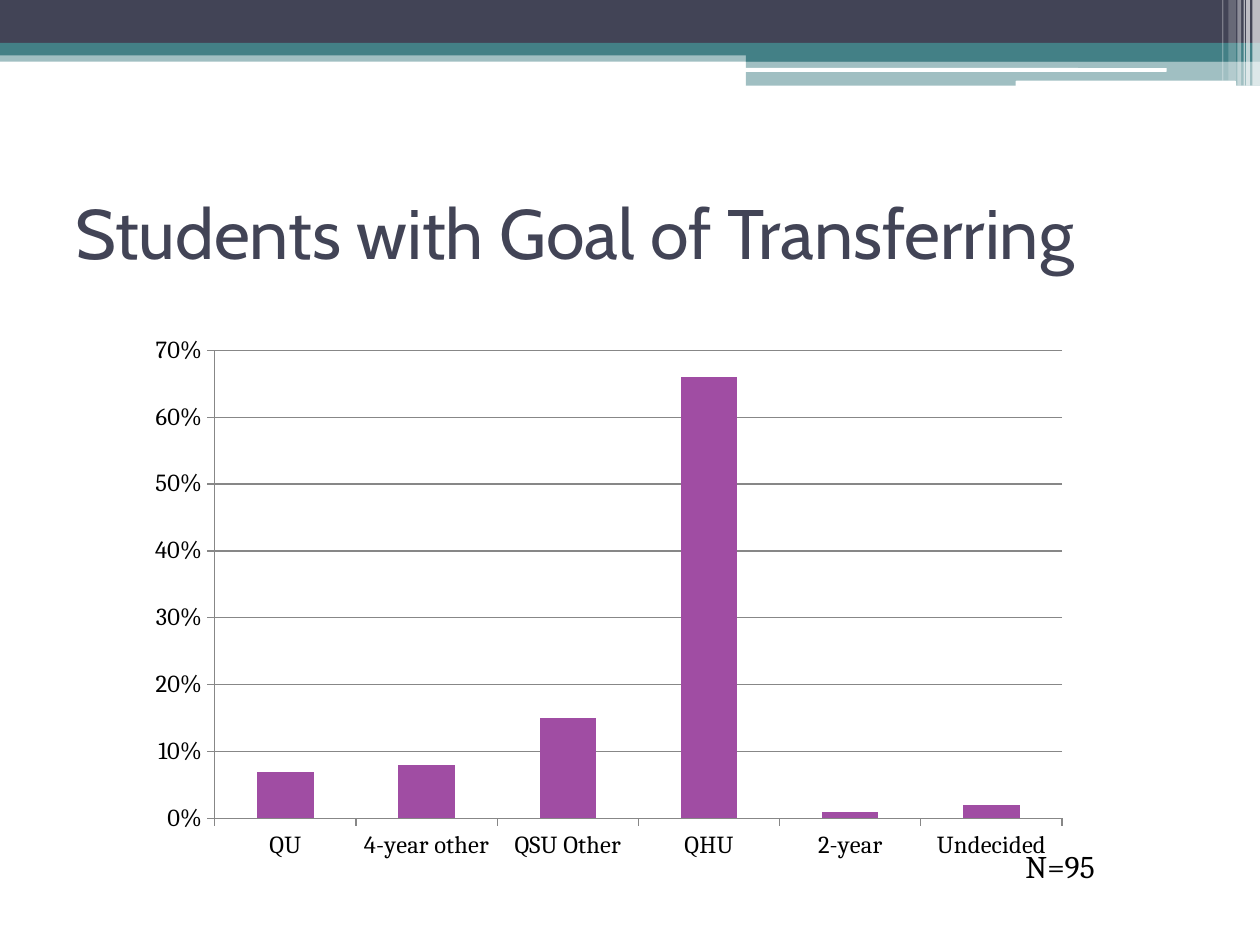
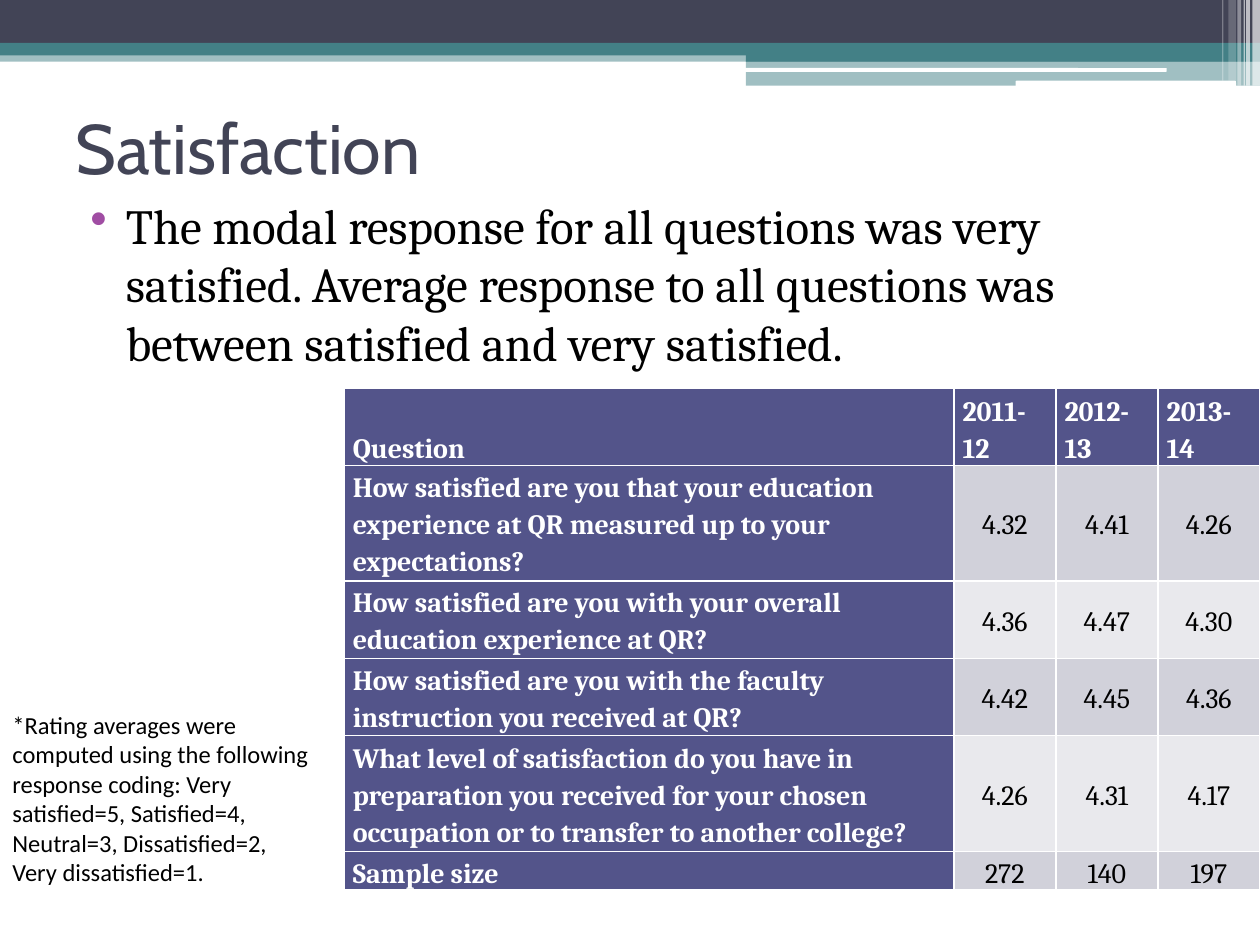
from lxml.etree import SubElement
from pptx import Presentation
from pptx.chart.data import CategoryChartData
from pptx.dml.color import RGBColor
from pptx.enum.chart import XL_CHART_TYPE, XL_TICK_MARK
from pptx.enum.shapes import MSO_SHAPE
from pptx.enum.text import MSO_ANCHOR, PP_ALIGN
from pptx.oxml.ns import qn
from pptx.util import Inches, Pt

WHITE = RGBColor(0xFF, 0xFF, 0xFF)
BLACK = RGBColor(0, 0, 0)
SLATE = RGBColor(0x42, 0x44, 0x56)
TEAL = RGBColor(0x43, 0x80, 0x86)
PURPLE = RGBColor(0xA0, 0x4D, 0xA3)
INDIGO = RGBColor(0x53, 0x54, 0x8A)
GREY = RGBColor(0x87, 0x87, 0x87)
ROW_FILLS = (RGBColor(0xD1, 0xD1, 0xDA), RGBColor(0xE9, 0xE9, 0xED))

TITLE_FONT = {"name": "Cabin", "size": Pt(40), "color": SLATE}
BODY_FONT = {"name": "Cambria", "size": Pt(28), "color": BLACK}
SAMPLE_FONT = BODY_FONT | {"size": Pt(18)}
NOTE_FONT = {"name": "Calibri", "size": Pt(14), "color": BLACK}
AXIS_FONT = {"name": "Cambria", "size": Pt(14), "color": BLACK}
VALUE_FONT = {"name": "Cambria", "size": Pt(16), "color": BLACK, "bold": False}
HEADING_FONT = VALUE_FONT | {"color": WHITE, "bold": True}

# left, top, width, height, colour, opacity in percent
BANDS = [
    (0, 0.4, 10, 0.09, TEAL, 50),
    (0, 0, 10, 0.34, SLATE, 100),
    (0, 0.34, 10, 0.1, TEAL, 100),
    (5.92, 0.39, 4.08, 0.1, TEAL, 100),
    (5.92, 0.48, 4.08, 0.2, TEAL, 50),
]
WHITE_BARS = [(5.91, 0.54, 3.35, 0.03), (8.06, 0.64, 1.75, 0.05)]
# left, width, height, opacity in percent
CORNER_STRIPES = [
    (9.94, 0.06, 0.68, 65),
    (9.89, 0.03, 0.68, 65),
    (9.87, 0.01, 0.68, 60),
    (9.82, 0.03, 0.68, 40),
    (9.75, 0.06, 0.64, 20),
    (9.7, 0.01, 0.64, 30),
]

TRANSFER_GOALS = {
    "QU": 0.07,
    "4-year other": 0.08,
    "QSU Other": 0.15,
    "QHU": 0.66,
    "2-year": 0.01,
    "Undecided": 0.02,
}
RATINGS = [
    ("Question", "2011-12", "2012-13", "2013-14"),
    ("How satisfied are you that your education experience at QR measured up "
     "to your expectations?", "4.32", "4.41", "4.26"),
    ("How satisfied are you with your overall education experience at QR?",
     "4.36", "4.47", "4.30"),
    ("How satisfied are you with the faculty instruction you received at QR?",
     "4.42", "4.45", "4.36"),
    ("What level of satisfaction do you have in preparation you received for "
     "your chosen occupation or to transfer to another college?",
     "4.26", "4.31", "4.17"),
    ("Sample size", "272", "140", "197"),
]
COLUMN_WIDTHS = (4.84, 0.81, 0.81, 0.81)
ROW_HEIGHTS = (0.5, 0.83, 0.55, 0.55, 0.83, 0.26)


def style_font(font, style):
    for name, value in style.items():
        if name == "color":
            font.color.rgb = value
        else:
            setattr(font, name, value)


def add_bar(slide, left, top, width, height, color, opacity=100, preset=MSO_SHAPE.RECTANGLE):
    bar = slide.shapes.add_shape(
        preset, Inches(left), Inches(top), Inches(width), Inches(height))
    bar.shadow.inherit = False
    bar.line.fill.background()
    bar.fill.solid()
    bar.fill.fore_color.rgb = color
    if opacity < 100:
        color_node = bar.fill._xPr.find(qn("a:solidFill"))[0]
        SubElement(color_node, qn("a:alpha")).set("val", str(opacity * 1000))


def add_top_band(slide):
    for band in BANDS:
        add_bar(slide, *band)
    for bar in WHITE_BARS:
        add_bar(slide, *bar, WHITE, preset=MSO_SHAPE.ROUNDED_RECTANGLE)
    for left, width, height, opacity in CORNER_STRIPES:
        add_bar(slide, left, 0, width, height, WHITE, opacity)


def add_text(slide, text, left, top, width, height, style, anchor=MSO_ANCHOR.TOP):
    """Add a wrapped text box and return its paragraph."""
    box = slide.shapes.add_textbox(
        Inches(left), Inches(top), Inches(width), Inches(height))
    box.text_frame.word_wrap = True
    box.text_frame.vertical_anchor = anchor
    para = box.text_frame.paragraphs[0]
    span = para.add_run()
    span.text = text
    style_font(span.font, style)
    return para


def indent(para, margin, first_line=0):
    para.space_before = Pt(3)
    properties = para._p.get_or_add_pPr()
    properties.set("marL", str(Inches(margin)))
    properties.set("indent", str(Inches(first_line)))
    return properties


def add_bullet(para, color):
    properties = indent(para, 0.4, -0.28)
    bullet_color = SubElement(properties, qn("a:buClr"))
    SubElement(bullet_color, qn("a:srgbClr")).set("val", str(color))
    SubElement(properties, qn("a:buChar")).set("char", "•")


def add_page(deck, title, title_top):
    page = deck.slides.add_slide(deck.slide_layouts[6])
    add_top_band(page)
    add_text(page, title, 0.5, title_top, 9, 1.17, TITLE_FONT, MSO_ANCHOR.MIDDLE)
    return page


def add_goal_chart(slide):
    data = CategoryChartData(number_format="0%")
    data.categories = TRANSFER_GOALS.keys()
    data.add_series("Series 1", TRANSFER_GOALS.values())
    chart = slide.shapes.add_chart(
        XL_CHART_TYPE.COLUMN_CLUSTERED,
        Inches(1.08), Inches(2.58), Inches(7.5), Inches(4.33), data).chart
    chart.has_legend = False
    chart.has_title = False
    style_font(chart.font, AXIS_FONT)

    plot = chart.plots[0]
    plot.gap_width = 150
    plot.vary_by_categories = False
    columns = plot.series[0].format.fill
    columns.solid()
    columns.fore_color.rgb = PURPLE

    scale = chart.value_axis
    scale.minimum_scale, scale.maximum_scale, scale.major_unit = 0, 0.7, 0.1
    scale.tick_labels.number_format = "0%"
    scale.tick_labels.number_format_is_linked = False
    scale.major_gridlines.format.line.color.rgb = GREY
    for axis in (scale, chart.category_axis):
        axis.major_tick_mark = XL_TICK_MARK.OUTSIDE
        axis.format.line.color.rgb = GREY
        style_font(axis.tick_labels.font, AXIS_FONT)


def fill_cell(cell, text, row, column):
    """Fill one cell; the white rules come from the default table style."""
    is_heading = row == 0 or column == 0
    cell.margin_left = cell.margin_right = Inches(0.07)
    cell.margin_top = cell.margin_bottom = 0
    is_edge_row = row in (0, len(RATINGS) - 1)
    cell.vertical_anchor = MSO_ANCHOR.BOTTOM if is_edge_row else MSO_ANCHOR.MIDDLE
    cell.fill.solid()
    cell.fill.fore_color.rgb = INDIGO if is_heading else ROW_FILLS[(row - 1) % 2]
    para = cell.text_frame.paragraphs[0]
    para.line_spacing = 1.15
    para.alignment = PP_ALIGN.LEFT if is_heading else PP_ALIGN.CENTER
    span = para.add_run()
    span.text = text
    style_font(span.font, HEADING_FONT if is_heading else VALUE_FONT)


def add_rating_table(slide):
    table = slide.shapes.add_table(
        len(RATINGS), len(COLUMN_WIDTHS), Inches(2.73), Inches(3.08),
        Inches(sum(COLUMN_WIDTHS)), Inches(sum(ROW_HEIGHTS))).table
    for column, width in zip(table.columns, COLUMN_WIDTHS):
        column.width = Inches(width)
    for row, height in zip(table.rows, ROW_HEIGHTS):
        row.height = Inches(height)
    for row, texts in enumerate(RATINGS):
        for column, text in enumerate(texts):
            fill_cell(table.cell(row, column), text, row, column)


def main():
    deck = Presentation()
    deck.slide_width, deck.slide_height = Inches(10), Inches(7.5)

    transfer = add_page(deck, "Students with Goal of Transferring", 1.25)
    indent(add_text(transfer, "N=95", 7.92, 6.67, 1.42, 0.62, SAMPLE_FONT), 0.12)
    add_goal_chart(transfer)

    satisfaction = add_page(deck, "Satisfaction", 0.58)
    summary = add_text(
        satisfaction,
        "The modal response for all questions was very satisfied. Average response "
        "to all questions was between satisfied and very satisfied.",
        0.5, 1.5, 9, 4.73, BODY_FONT)
    add_bullet(summary, PURPLE)
    add_rating_table(satisfaction)
    add_text(
        satisfaction,
        "*Rating averages were computed using the following response coding: Very "
        "satisfied=5, Satisfied=4, Neutral=3, Dissatisfied=2, Very dissatisfied=1.",
        0, 5.58, 2.6, 1.51, NOTE_FONT, MSO_ANCHOR.MIDDLE)

    deck.save("out.pptx")


if __name__ == "__main__":
    main()
